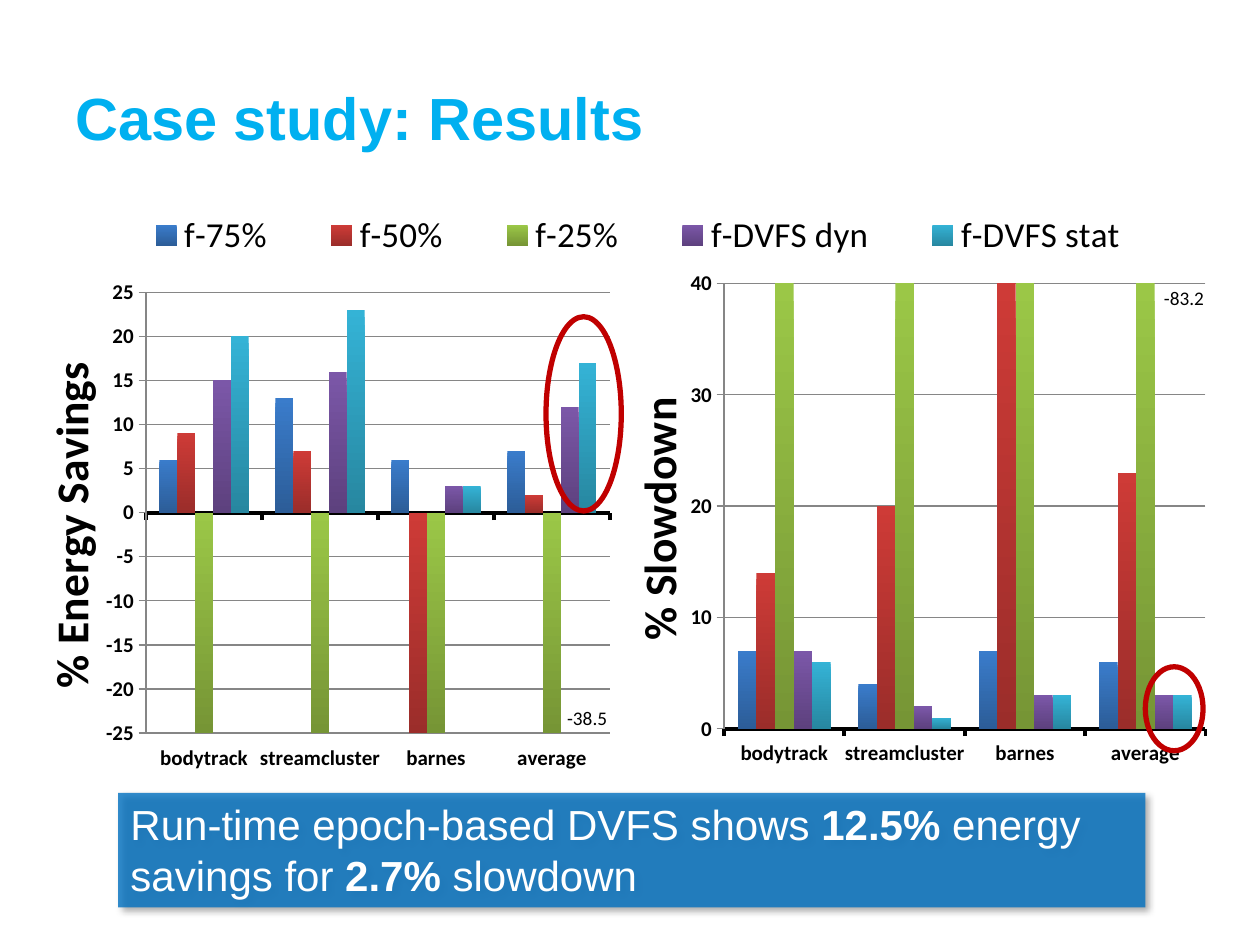
from lxml import etree
from pptx import Presentation
from pptx import util as u
from pptx.chart.data import CategoryChartData
from pptx.dml.color import RGBColor
from pptx.enum import chart as ch
from pptx.enum import shapes, text
from pptx.oxml import parse_xml
from pptx.oxml.ns import nsdecls, qn

COLORS = {
    "title": "00B0F0",
    "ink": "000000",
    "axis": "868686",
    "ring": "C00000",
    "banner": "0070C0",
    "banner_text": "FFFFFF",
}
SERIES_COLORS = {
    "f-75%": ("3A7CCB", "2C5D98"),
    "f-50%": ("CE3B37", "9B2D2A"),
    "f-25%": ("9BC747", "769535"),
    "f-DVFS dyn": ("7B57A8", "5D417E"),
    "f-DVFS stat": ("34B3D6", "2787A0"),
}
BENCHMARKS = ["bodytrack", "streamcluster", "barnes", "average"]
ENERGY = [
    (6, 13, 6, 7),
    (9, 7, -49, 2),
    (-36, -62, -41, -38),
    (15, 16, 3, 12),
    (20, 23, 3, 17),
]
SLOWDOWN = [
    (7, 4, 7, 6),
    (14, 20, 87, 23),
    (80, 114, 87, 83),
    (7, 2, 3, 3),
    (6, 1, 3, 3),
]
ENERGY_BOX = (18, 108, 678, 360)
SLOWDOWN_BOX = (354, 120, 336, 360)


def rgb(name):
    return RGBColor.from_string(COLORS[name])


def points(box):
    return [u.Pt(value) for value in box]


def style_font(font, size, color="ink", name="Calibri", bold=False):
    font.size = u.Pt(size)
    font.name = name
    font.bold = bold
    font.color.rgb = rgb(color)


def style_line(line, color, width):
    line.color.rgb = rgb(color)
    line.width = u.Pt(width)


def manual_layout(area, part_box, chart_box, inner=False):
    width, height = chart_box[2:]
    x, y, w, h = (u.Pt(part) / u.Pt(whole)
                  for part, whole in zip(part_box, (width, height) * 2))
    target = '<c:layoutTarget val="inner"/>' if inner else ""
    layout = parse_xml(
        f'<c:layout {nsdecls("c")}><c:manualLayout>{target}'
        '<c:xMode val="edge"/><c:yMode val="edge"/>'
        f'<c:x val="{x}"/><c:y val="{y}"/><c:w val="{w}"/><c:h val="{h}"/>'
        "</c:manualLayout></c:layout>"
    )
    for old in area.findall(qn("c:layout")):
        area.remove(old)
    position = area.find(qn("c:legendPos"))
    area.insert(0 if position is None else 1, layout)


def color_bars(plot):
    for series in plot.series:
        series.invert_if_negative = False
        fill = series.format.fill
        fill.gradient()
        fill.gradient_angle = 270
        for stop, shade in zip(fill.gradient_stops, SERIES_COLORS[series.name]):
            stop.color.rgb = RGBColor.from_string(shade)


def add_bars(slide, box, results, axis_title, scale, plot_box):
    data = CategoryChartData()
    data.categories = BENCHMARKS
    for name, values in zip(SERIES_COLORS, results):
        data.add_series(name, values)
    chart = slide.shapes.add_chart(
        ch.XL_CHART_TYPE.COLUMN_CLUSTERED, *points(box), data
    ).chart
    style_font(chart.font, 10)
    chart.has_title = False
    chart.has_legend = False
    plot = chart.plots[0]
    plot.gap_width = 150
    plot.overlap = 0
    plot.vary_by_categories = False
    color_bars(plot)

    benchmarks, percent = chart.category_axis, chart.value_axis
    for axis in (benchmarks, percent):
        style_font(axis.tick_labels.font, 12, bold=True)
        axis.major_tick_mark = ch.XL_TICK_MARK.OUTSIDE
        axis.minor_tick_mark = ch.XL_TICK_MARK.NONE
    benchmarks.tick_label_position = ch.XL_TICK_LABEL_POSITION.LOW
    style_line(benchmarks.format.line, "ink", 2.25)
    percent.minimum_scale, percent.maximum_scale, percent.major_unit = scale
    percent.has_major_gridlines = True
    style_line(percent.format.line, "axis", 0.75)
    style_line(percent.major_gridlines.format.line, "axis", 0.75)
    heading = percent.axis_title.text_frame
    heading.text = axis_title
    style_font(heading.paragraphs[0].font, 26, bold=True)
    plot_area = chart.element.find(".//" + qn("c:plotArea"))
    manual_layout(plot_area, plot_box, box, inner=True)
    return chart


def add_legend(chart, legend_box, chart_box):
    chart.has_legend = True
    legend = chart.legend
    legend.position = ch.XL_LEGEND_POSITION.TOP
    legend.include_in_layout = False
    style_font(legend.font, 20)
    manual_layout(chart.element.find(".//" + qn("c:legend")), legend_box, chart_box)


def add_text(slide, box, wording, size, anchor=text.MSO_ANCHOR.TOP, **font):
    frame = slide.shapes.add_textbox(*points(box)).text_frame
    frame.word_wrap = True
    frame.vertical_anchor = anchor
    frame.text = wording
    style_font(frame.paragraphs[0].font, size, **font)


def add_ring(slide, box):
    ring = slide.shapes.add_shape(shapes.MSO_SHAPE.OVAL, *points(box))
    ring.shadow.inherit = False
    ring.fill.background()
    style_line(ring.line, "ring", 3)


def add_banner(slide, box, phrases):
    banner = slide.shapes.add_shape(shapes.MSO_SHAPE.RECTANGLE, *points(box))
    banner.shadow.inherit = False
    banner.fill.solid()
    banner.fill.fore_color.rgb = rgb("banner")
    banner.line.fill.background()
    properties = banner.element.spPr
    tint = properties.find(qn("a:solidFill")).find(qn("a:srgbClr"))
    etree.SubElement(tint, qn("a:alpha"), val="80000")
    properties.find(qn("a:effectLst")).append(parse_xml(
        f'<a:outerShdw {nsdecls("a")} blurRad="{u.Pt(4)}" dist="{u.Pt(3)}" '
        'dir="2700000" algn="tl" rotWithShape="0"><a:srgbClr val="000000">'
        '<a:alpha val="40000"/></a:srgbClr></a:outerShdw>'
    ))
    frame = banner.text_frame
    frame.word_wrap = True
    frame.vertical_anchor = text.MSO_ANCHOR.TOP
    message = frame.paragraphs[0]
    message.alignment = text.PP_ALIGN.LEFT
    style_font(message.font, 24, "banner_text", "Arial")
    for phrase, bold in phrases:
        run = message.add_run()
        run.text = phrase
        run.font.bold = bold


def main():
    deck = Presentation()
    deck.slide_width, deck.slide_height = u.Pt(720), u.Pt(540)
    slide = deck.slides.add_slide(deck.slide_layouts[6])

    energy = add_bars(slide, ENERGY_BOX, ENERGY, "% Energy Savings",
                      (-25, 25, 5), (65.5, 59, 265, 252))
    add_legend(energy, (41, 12, 611, 29), ENERGY_BOX)
    add_bars(slide, SLOWDOWN_BOX, SLOWDOWN, "% Slowdown",
             (0, 40, 10), (60, 42, 276, 254.5))

    add_text(slide, (317, 400, 42, 21), "-38.5", 11)
    add_text(slide, (658, 160, 42, 21), "-83.2", 11)
    add_ring(slide, (654.5, 381, 33, 48))
    add_ring(slide, (312, 181, 43, 111))
    add_banner(slide, (67.5, 453, 587, 65.5), [
        ("Run-time epoch-based DVFS shows ", False),
        ("12.5%", True),
        (" energy savings for ", False),
        ("2.7%", True),
        (" slowdown", False),
    ])
    add_text(slide, (36, 21.6, 648, 90), "Case study: Results", 34,
             text.MSO_ANCHOR.MIDDLE, color="title", name="Arial", bold=True)
    deck.save("out.pptx")


if __name__ == "__main__":
    main()
